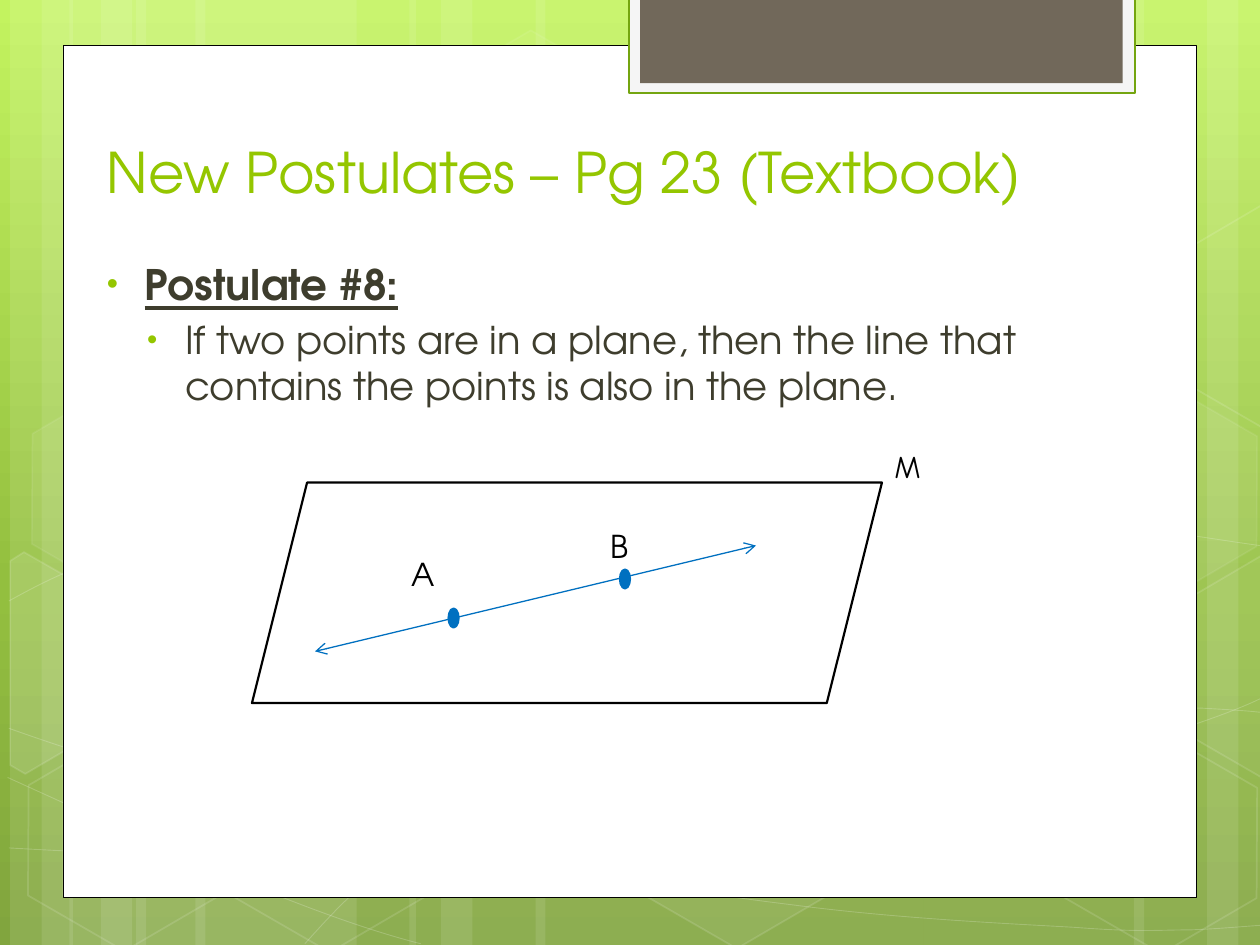
from copy import deepcopy
from dataclasses import dataclass
from math import cos, radians, sin
from typing import NamedTuple

from lxml import etree
from pptx import Presentation
from pptx.dml.color import RGBColor
from pptx.enum.shapes import MSO_CONNECTOR, MSO_SHAPE
from pptx.enum.text import MSO_ANCHOR, MSO_AUTO_SIZE
from pptx.oxml.ns import qn
from pptx.util import Cm, Pt

RECT, HEXAGON = MSO_SHAPE.RECTANGLE, MSO_SHAPE.HEXAGON
OVAL, PLANE = MSO_SHAPE.OVAL, MSO_SHAPE.PARALLELOGRAM
STRAIGHT = MSO_CONNECTOR.STRAIGHT
BOTTOM, TOP = MSO_ANCHOR.BOTTOM, MSO_ANCHOR.TOP
FIT = MSO_AUTO_SIZE.SHAPE_TO_FIT_TEXT
TILT = 30


@dataclass(frozen=True)
class Theme:
    sky: tuple = ((0, "C3F35F"), (0.62, "93BF3F"), (1, "81A53E"))
    white: str = "FFFFFF"
    black: str = "000000"
    frame: str = "F5F5F5"
    edge: str = "74A510"
    tab: str = "71685A"
    lime: str = "94C600"
    ink: str = "3E3D2D"
    blue: str = "0070C0"
    font: str = "TeX Gyre Adventor"
    hand: str = "Comic Neue"
    title: int = 32
    head: int = 24
    body: int = 22
    label: int = 18


class Box(NamedTuple):
    left: float
    top: float
    width: float
    height: float


class Look(NamedTuple):
    fill: str | None = None
    line: str | None = None
    weight: float = 1
    fill_pct: int = 100
    line_pct: int = 100


class Style(NamedTuple):
    size: int
    color: str
    font: str
    strong: bool = False  # bold and underlined


class Cut(NamedTuple):
    points: list
    center: tuple
    fill_pct: int


T = Theme()


def grid(*values: float) -> list:
    """Turn slide grid units (one inch each) into lengths."""
    return [Cm(value * 2.54) for value in values]


def fade(node, pct: int) -> None:
    if pct < 100:
        color = node.find(qn("a:solidFill")).find(qn("a:srgbClr"))
        etree.SubElement(color, qn("a:alpha"), val=str(pct * 1000))


def paint(shape, look: Look) -> None:
    shape.shadow.inherit = False
    props = shape.element.spPr
    if look.fill:
        shape.fill.solid()
        shape.fill.fore_color.rgb = RGBColor.from_string(look.fill)
        fade(props, look.fill_pct)
    else:
        shape.fill.background()
    if look.line:
        shape.line.color.rgb = RGBColor.from_string(look.line)
        shape.line.width = Pt(look.weight)
        fade(props.find(qn("a:ln")), look.line_pct)
    else:
        shape.line.fill.background()


def add_shape(slide, kind, box: Box, look: Look):
    shape = slide.shapes.add_shape(kind, *grid(*box))
    paint(shape, look)
    return shape


def add_path(slide, points: list, look: Look, close: bool):
    first, *rest = [grid(*point) for point in points]
    pen = slide.shapes.build_freeform(*first)
    pen.add_line_segments(rest, close=close)
    shape = pen.convert_to_shape()
    paint(shape, look)
    return shape


def add_wave(slide, knots: list, look: Look) -> None:
    """Join each three knots after the first into one cubic curve."""
    shape = add_path(slide, knots, look, False)
    trail = next(shape.element.iter(qn("a:path")))
    lines = trail.findall(qn("a:lnTo"))
    for i in range(0, len(lines), 3):
        curve = etree.SubElement(trail, qn("a:cubicBezTo"))
        for line in lines[i:i + 3]:
            curve.append(line[0])
            trail.remove(line)


def add_cut(slide, cut: Cut) -> None:
    """Level the outline about its center, then tilt the whole shape."""
    (mid_x, mid_y), turn = cut.center, radians(TILT)
    level = [(mid_x + (x - mid_x) * cos(turn) + (y - mid_y) * sin(turn),
              mid_y - (x - mid_x) * sin(turn) + (y - mid_y) * cos(turn)) for x, y in cut.points]
    add_path(slide, level, glass(cut.fill_pct, 12), True).rotation = TILT


def add_frame(slide, box: Box, wrap: bool = True, anchor=TOP):
    frame = slide.shapes.add_textbox(*grid(*box)).text_frame
    frame.word_wrap = wrap
    frame.vertical_anchor = anchor
    return frame


def write(para, text: str, style: Style) -> None:
    para.text = text
    font = para.font
    font.size, font.name = Pt(style.size), style.font
    font.color.rgb = RGBColor.from_string(style.color)
    font.bold = font.underline = style.strong


def add_bullet(para, margin: float) -> None:
    props = para._p.get_or_add_pPr()
    left, hang = grid(margin, -0.3)
    props.set("marL", str(left))
    props.set("indent", str(hang))
    color = etree.SubElement(props, qn("a:buClr"))
    etree.SubElement(color, qn("a:srgbClr"), val=T.lime)
    etree.SubElement(props, qn("a:buSzPct"), val="76000")
    etree.SubElement(props, qn("a:buFont"), typeface="Arial")
    etree.SubElement(props, qn("a:buChar"), char="•")


def add_arrow(slide, start: tuple, end: tuple) -> None:
    line = slide.shapes.add_connector(STRAIGHT, *grid(*start, *end))
    line.line.color.rgb = RGBColor.from_string(T.blue)
    line.line.width = Pt(0.75)
    props = line.element.spPr
    for tip in ("a:headEnd", "a:tailEnd"):
        etree.SubElement(props.find(qn("a:ln")), qn(tip), type="arrow")
    etree.SubElement(props, qn("a:effectLst"))


def add_sky(slide) -> None:
    fill = slide.background.fill
    fill.gradient()
    fill.gradient_angle = 270
    stops = next(slide.element.iter(qn("a:gsLst")))
    stops.append(deepcopy(stops[-1]))
    for stop, (place, color) in zip(fill.gradient_stops, T.sky):
        stop.position = place
        stop.color.rgb = RGBColor.from_string(color)


# Backdrop: (left, width) of bands, knots of waves, (left, top, fill %, line %) of cells
BANDS = [(1.08, 1.75), (0.08, 0.5), (0.33, 0.83), (1.55, 1.75), (0.55, 0.5), (0.8, 0.83),
         (7.33, 1.75), (9.58, 0.5), (9, 0.83), (4.25, 3.08), (3.25, 0.5), (3.5, 0.83)]
WAVES = [
    [(0.07, 6.73), (0.61, 6.76), (1.15, 6.79), (1.9, 6.78), (2.65, 6.77), (3.58, 6.75), (4.58, 6.65),
     (5.58, 6.55), (7, 6.36), (7.92, 6.17), (8.83, 5.98), (9.77, 5.68), (10.07, 5.51)],
    [(0.07, 4.77), (0.36, 4.61), (0.65, 4.46), (1.21, 4.31), (1.78, 4.16), (2.59, 3.94), (3.47, 3.87),
     (4.36, 3.8), (5.44, 3.79), (6.54, 3.87), (7.64, 3.95), (9.47, 4.26), (10.07, 4.34)],
    [(0.06, 6.17), (1.27, 6.72), (2.47, 7.27), (3.34, 7.49)],
    [(0.07, 5.78), (0.38, 5.89), (0.7, 6), (1.28, 6.16), (1.86, 6.31), (2.73, 6.56), (3.57, 6.73),
     (4.4, 6.9), (5.45, 7.08), (6.28, 7.18), (7.11, 7.29), (8, 7.33), (8.53, 7.36),
     (9.05, 7.4), (9.19, 7.38), (9.45, 7.38), (9.71, 7.37), (9.89, 7.35), (10.07, 7.34)],
    [(2.42, 7.49), (2.6, 7.29), (2.78, 7.09), (3.02, 6.91), (3.26, 6.73), (3.6, 6.53), (3.88, 6.39),
     (4.16, 6.25), (4.33, 6.19), (4.7, 6.09), (5.06, 5.99), (5.73, 5.85), (6.08, 5.78),
     (6.44, 5.71), (6.49, 5.71), (6.8, 5.69), (7.11, 5.66), (7.6, 5.63), (7.94, 5.62),
     (8.29, 5.61), (8.86, 5.62), (8.86, 5.62), (9.08, 5.62), (9.31, 5.62), (9.53, 5.62),
     (9.71, 5.63), (9.88, 5.64), (9.97, 5.65), (10.06, 5.66), (10.03, 5.65), (10.06, 5.66)]]
CELLS = [(3.34, 0.36, 4, 8), (4.97, 5.89, 6, 12), (0.11, 5.91, 0, 12), (0.14, 3.12, 7, 8),
         (1.74, 5.92, 0, 12), (7.53, 4.53, 10, 12), (8.34, 5.93, 0, 12), (8.34, 3.14, 7, 8)]
LEFT = [(0.08, 4.45), (0.19, 4.38), (0.96, 4.82), (0.95, 5.7), (0.2, 6.14), (0.08, 6.07)]
RIGHT = [(9.26, 4.85), (10.01, 4.41), (10.09, 4.46), (10.09, 6.13), (10.02, 6.17), (9.26, 5.73)]
HIGH = [(x, y - 2.78) for x, y in RIGHT]
CUTS = [Cut(LEFT, (0.36, 5.35), 10), Cut(RIGHT, (9.85, 5.2), 4), Cut(HIGH, (9.85, 2.42), 0)]


def glass(fill_pct: int, line_pct: int) -> Look:
    return Look(T.white if fill_pct else None, T.white, 1, fill_pct, line_pct)


def add_backdrop(slide) -> None:
    add_sky(slide)
    for left, width in BANDS:
        add_shape(slide, RECT, Box(left, 0, width, 7.5), Look(T.white, fill_pct=10))
    for knots in WAVES:
        add_wave(slide, knots, Look(line=T.white, weight=0.5, line_pct=20))
    for left, top, *pcts in CELLS:
        cell = add_shape(slide, HEXAGON, Box(left, top, 1.75, 1.52), glass(*pcts))
        cell.adjustments[0] = 0.285
        cell.rotation = TILT
    for cut in CUTS:
        add_cut(slide, cut)
    # White page and top tab
    add_shape(slide, RECT, Box(0.5, 0.36, 9, 6.76), Look(T.white, T.black, 0.5))
    add_shape(slide, RECT, Box(4.99, -0.02, 4.02, 0.76), Look(T.frame, T.edge, 1.25))
    add_shape(slide, RECT, Box(5.08, -0.02, 3.83, 0.68), Look(T.tab))


def add_words(slide) -> None:
    title = add_frame(slide, Box(0.75, 0.92, 8.18, 0.75), anchor=BOTTOM)
    write(title.paragraphs[0], "New Postulates – Pg 23 (Textbook)", Style(T.title, T.lime, T.font))
    body = add_frame(slide, Box(0.67, 2, 8.58, 4.83))
    rule = "If two points are in a plane, then the line that contains the points is also in the plane."
    rows = [("Postulate #8:", 0.38, Style(T.head, T.ink, T.font, True)),
            (rule, 0.7, Style(T.body, T.ink, T.font))]
    for level, (text, margin, style) in enumerate(rows):
        para = body.add_paragraph() if level else body.paragraphs[0]
        para.level = level
        add_bullet(para, margin)
        para.space_before = Pt(style.size * 0.2)
        write(para, text, style)


def add_label(slide, text: str, box: Box, font: str = T.font) -> None:
    frame = add_frame(slide, box, wrap=False)
    frame.auto_size = FIT
    write(frame.paragraphs[0], text, Style(T.label, T.black, font))


def add_dot(slide, left: float, top: float) -> None:
    add_shape(slide, OVAL, Box(left, top, 0.08, 0.15), Look(T.blue, T.blue, 1.25))


def add_figure(slide) -> None:
    add_shape(slide, PLANE, Box(2, 3.83, 5, 1.75), Look(T.white, T.black, 1.25))
    add_label(slide, "B", Box(4.75, 4.13, 0.35, 0.4))
    add_dot(slide, 4.92, 4.52)
    add_arrow(slide, (2.5, 5.17), (6, 4.33))
    add_label(slide, "A", Box(3.17, 4.36, 0.39, 0.4))
    add_dot(slide, 3.56, 4.83)
    add_label(slide, "M", Box(7, 3.5, 0.45, 0.4), T.hand)


def main() -> None:
    deck = Presentation()
    deck.slide_width, deck.slide_height = grid(10, 7.5)
    slide = deck.slides.add_slide(deck.slide_layouts[6])
    add_backdrop(slide)
    add_words(slide)
    add_figure(slide)
    deck.save("out.pptx")


if __name__ == "__main__":
    main()
